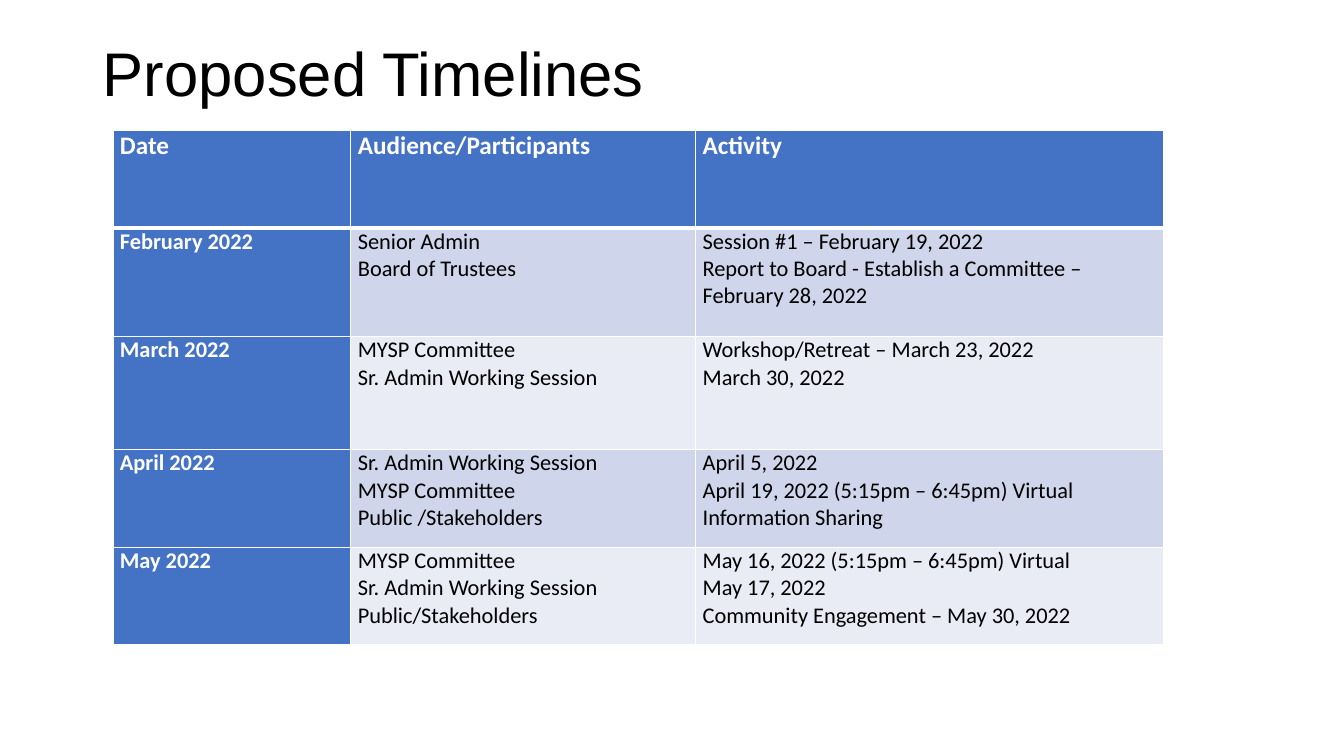
"""Build the Proposed Timelines slide with its table of dates, audiences and activities."""
from dataclasses import dataclass

import pptx
import pptx.dml.color
import pptx.enum.text
import pptx.oxml
import pptx.oxml.ns
import pptx.util

PX = 9144
COLORS = {
    "header": "4472C4",
    "band_dark": "CFD5EA",
    "band_light": "E9EBF5",
    "white": "FFFFFF",
    "black": "000000",
}
COL_WIDTHS = [236, 342, 464]
HEADER_HEIGHT = 97
HEADINGS = ["Date", "Audience/Participants", "Activity"]


@dataclass(frozen=True)
class Month:
    """One row of the timeline."""
    date: str
    audience: list[str]
    activity: list[str]
    height: int


MONTHS = [
    Month("February 2022",
          ["Senior Admin", "Board of Trustees"],
          ["Session #1 – February 19, 2022",
           "Report to Board - Establish a Committee – February 28, 2022"], 108),
    Month("March 2022",
          ["MYSP Committee", "Sr. Admin Working Session"],
          ["Workshop/Retreat – March 23, 2022", "March 30, 2022"], 112),
    Month("April 2022",
          ["Sr. Admin Working Session", "MYSP Committee", "Public /Stakeholders"],
          ["April 5, 2022", "April 19, 2022 (5:15pm – 6:45pm) Virtual",
           "Information Sharing"], 97),
    Month("May 2022",
          ["MYSP Committee", "Sr. Admin Working Session", "Public/Stakeholders"],
          ["May 16, 2022 (5:15pm – 6:45pm) Virtual", "May 17, 2022",
           "Community Engagement – May 30, 2022"], 97),
]


def px(n: int) -> pptx.util.Emu:
    """Turn px into EMU."""
    return pptx.util.Emu(n * PX)


def rgb(name: str) -> pptx.dml.color.RGBColor:
    """Look up a named colour."""
    return pptx.dml.color.RGBColor.from_string(COLORS[name])


def set_attrs(obj: object, values: dict[str, object]) -> None:
    """Set each attribute in values on obj."""
    for name, value in values.items():
        setattr(obj, name, value)


def format_font(font: object, family: str, size: int, color: str, bold: bool) -> None:
    """Give a font its family, size, colour and weight."""
    set_attrs(font, {"name": family, "size": pptx.util.Pt(size), "bold": bold})
    font.color.rgb = rgb(color)


def add_borders(cell: object, top: int, bottom: int) -> None:
    """Draw white borders round a cell, widths in points."""
    tc_pr = cell._tc.get_or_add_tcPr()
    for side, width in {"L": 1, "R": 1, "T": top, "B": bottom}.items():
        tc_pr.append(pptx.oxml.parse_xml(
            f'<a:ln{side} {pptx.oxml.ns.nsdecls("a")} w="{pptx.util.Pt(width)}">'
            f'<a:solidFill><a:srgbClr val="{COLORS["white"]}"/></a:solidFill>'
            f'</a:ln{side}>'))


def fill_cell(cell: object, lines: list[str], row: int, col: int) -> None:
    """Write and format one table cell by its place in the grid."""
    heading = row == 0 or col == 0
    set_attrs(cell, {"margin_left": px(7), "margin_right": px(7),
                     "margin_top": 0, "margin_bottom": 0})
    add_borders(cell, top=3 if row == 1 else 1, bottom=3 if row == 0 else 1)
    band = "band_dark" if row % 2 else "band_light"
    cell.fill.solid()
    cell.fill.fore_color.rgb = rgb("header" if heading else band)
    cell.text_frame.text = "\n".join(lines)
    for p in cell.text_frame.paragraphs:
        for r in p.runs:
            format_font(r.font, "Calibri", 16 if row else 18,
                        "white" if heading else "black", heading)


def add_title(s: object, text: str) -> None:
    """Place and format the slide title."""
    sp = s.shapes.title
    set_attrs(sp, {"left": px(92), "top": px(3), "width": px(1150), "height": px(145)})
    tf = sp.text_frame
    tf.text = text
    set_attrs(tf, {"vertical_anchor": pptx.enum.text.MSO_ANCHOR.MIDDLE,
                   "auto_size": pptx.enum.text.MSO_AUTO_SIZE.NONE,
                   "word_wrap": True})
    p = tf.paragraphs[0]
    set_attrs(p, {"alignment": pptx.enum.text.PP_ALIGN.LEFT, "line_spacing": 0.9})
    format_font(p.runs[0].font, "Arial", 44, "black", False)


def add_timeline(s: object) -> None:
    """Add the timeline table."""
    heights = [HEADER_HEIGHT] + [m.height for m in MONTHS]
    rows = [[[h] for h in HEADINGS]]
    rows += [[[m.date], m.audience, m.activity] for m in MONTHS]
    table = s.shapes.add_table(len(rows), len(COL_WIDTHS), px(112), px(129),
                               px(sum(COL_WIDTHS)), px(sum(heights))).table
    for column, width in zip(table.columns, COL_WIDTHS):
        column.width = px(width)
    for i, (row, height) in enumerate(zip(rows, heights)):
        table.rows[i].height = px(height)
        for j, lines in enumerate(row):
            fill_cell(table.cell(i, j), lines, i, j)


def main() -> None:
    """Build and save the slide."""
    prs = pptx.Presentation()
    set_attrs(prs, {"slide_width": px(1333), "slide_height": px(750)})
    s = prs.slides.add_slide(prs.slide_layouts[5])
    add_title(s, "Proposed Timelines")
    add_timeline(s)
    prs.save("out.pptx")


if __name__ == "__main__":
    main()
